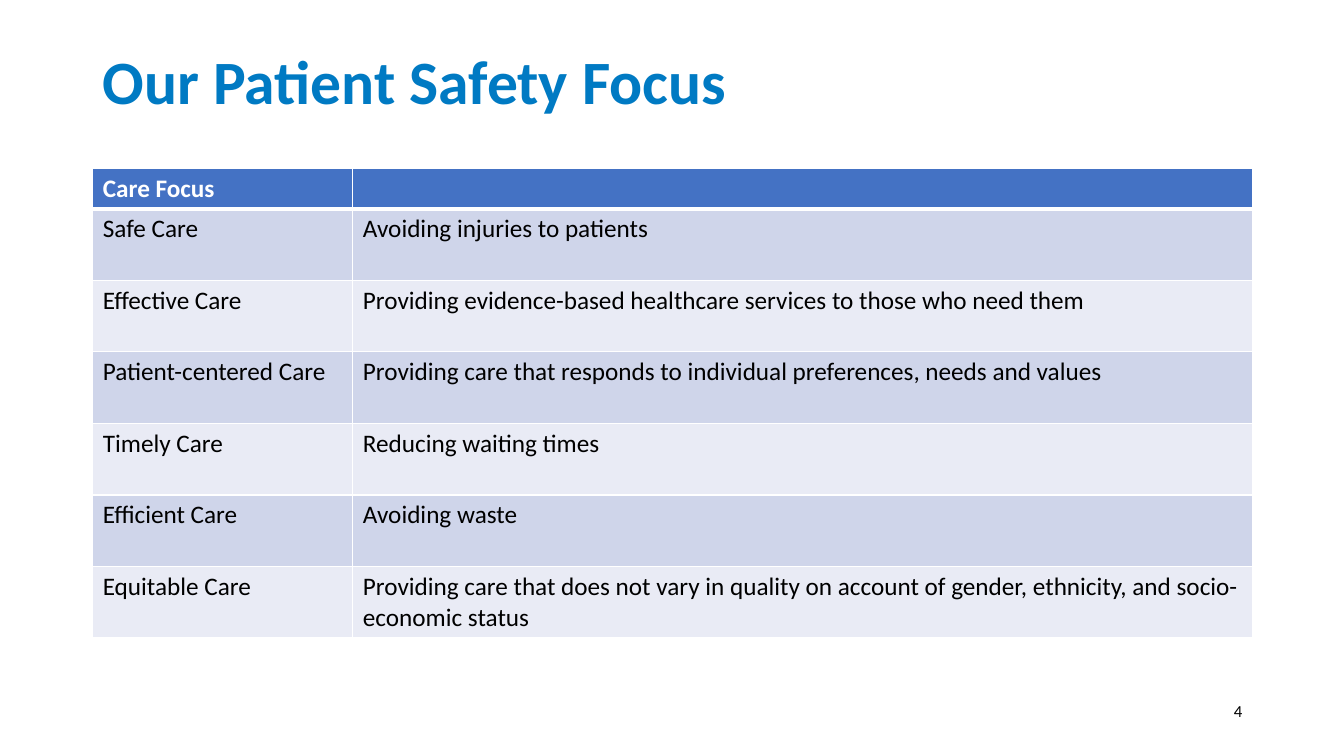
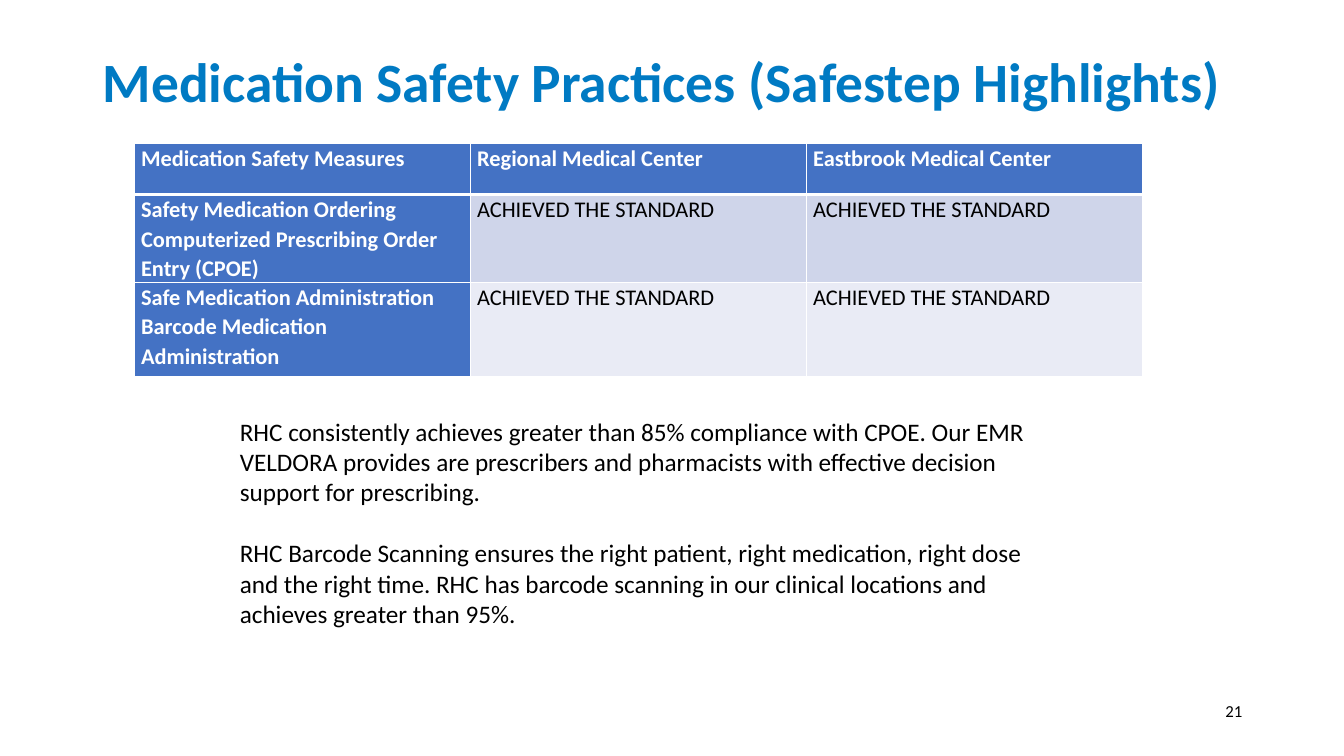
"""Build two patient safety slides with shared titles, tables and page numbers."""
from dataclasses import dataclass

import pptx
import pptx.dml.color
import pptx.enum.text
import pptx.oxml
import pptx.oxml.ns
import pptx.util

Inches = pptx.util.Inches
Pt = pptx.util.Pt
Anchor = pptx.enum.text.MSO_ANCHOR
Align = pptx.enum.text.PP_ALIGN


@dataclass(frozen=True)
class Theme:
    """Colours, font and type sizes of the deck."""
    font: str = "Calibri"
    title: str = "007AC3"
    header: str = "4472C4"
    bands: tuple = ("CFD5EA", "E9EBF5")
    light: str = "FFFFFF"
    dark: str = "000000"
    title_size: float = 44
    body_size: float = 18
    compact_size: float = 16
    number_size: float = 12
    rule: float = 1
    header_rule: float = 3


class Deck:
    """Hold the theme and the current slide, and add elements to it."""

    def __init__(self, theme):
        """Start an empty widescreen presentation."""
        self.theme = theme
        self.presentation = pptx.Presentation()
        self.presentation.slide_width = Inches(13.33)
        self.presentation.slide_height = Inches(7.5)
        self.slide = None

    def add_slide(self, title, number, title_size=None):
        """Add a slide with its title and page number."""
        self.slide = self.presentation.slides.add_slide(self.presentation.slide_layouts[6])
        self.add_text((0.92, 0.26, 11.5, 1.16), [title], title_size or self.theme.title_size,
                      color=self.theme.title, bold=True, anchor=Anchor.MIDDLE, line_spacing=0.9)
        self.add_text((11.67, 6.85, 0.75, 0.4), [str(number)], self.theme.number_size,
                      anchor=Anchor.MIDDLE, align=Align.RIGHT)

    def add_run(self, paragraph, text, size, color, bold=False):
        """Add one styled run to a paragraph."""
        run = paragraph.add_run()
        run.text = text
        run.font.name = self.theme.font
        run.font.size = Pt(size)
        run.font.bold = bold
        run.font.color.rgb = pptx.dml.color.RGBColor.from_string(color)

    def add_text(self, box, texts, size, color=None, bold=False, anchor=Anchor.TOP,
                 align=Align.LEFT, line_spacing=None, gap=0):
        """Add a wrapped text box with one paragraph for each text."""
        shape = self.slide.shapes.add_textbox(*map(Inches, box))
        frame = shape.text_frame
        frame.word_wrap = True
        frame.vertical_anchor = anchor
        for index, text in enumerate(texts):
            paragraph = frame.add_paragraph() if index else frame.paragraphs[0]
            paragraph.alignment = align
            paragraph.line_spacing = line_spacing
            if index:
                paragraph.space_before = Pt(gap)
            self.add_run(paragraph, text, size, color or self.theme.dark, bold)

    def add_borders(self, cell, row):
        """Rule a cell in white, with a heavier line below the header row."""
        theme = self.theme
        widths = {"L": theme.rule, "R": theme.rule,
                  "T": theme.header_rule if row == 1 else theme.rule,
                  "B": theme.header_rule if row == 0 else theme.rule}
        properties = cell._tc.get_or_add_tcPr()
        for side, width in widths.items():
            properties.append(pptx.oxml.parse_xml(
                f'<a:ln{side} {pptx.oxml.ns.nsdecls("a")} w="{Pt(width)}"><a:solidFill>'
                f'<a:srgbClr val="{theme.light}"/></a:solidFill></a:ln{side}>'))

    def add_table(self, left, top, widths, heights, rows, size,
                  header_column=False, margins=None, line_spacing=None):
        """Add a banded table with a header row and an optional header column."""
        theme = self.theme
        table = self.slide.shapes.add_table(
            len(rows), len(widths), Inches(left), Inches(top),
            Inches(sum(widths)), Inches(sum(heights))).table
        table.first_row = table.horz_banding = False
        for column, width in zip(table.columns, widths):
            column.width = Inches(width)
        for row_index, texts in enumerate(rows):
            table.rows[row_index].height = Inches(heights[row_index])
            for column_index, text in enumerate(texts):
                cell = table.cell(row_index, column_index)
                is_header = row_index == 0 or (header_column and column_index == 0)
                self.add_borders(cell, row_index)
                fill = theme.header if is_header else theme.bands[(row_index - 1) % 2]
                cell.fill.solid()
                cell.fill.fore_color.rgb = pptx.dml.color.RGBColor.from_string(fill)
                if margins:
                    cell.margin_left = cell.margin_right = Inches(margins[0])
                    cell.margin_top = cell.margin_bottom = Inches(margins[1])
                paragraph = cell.text_frame.paragraphs[0]
                paragraph.line_spacing = line_spacing
                if text:
                    self.add_run(paragraph, text, size,
                                 theme.light if is_header else theme.dark, is_header)


def main():
    """Build both slides and save the deck."""
    theme = Theme()
    deck = Deck(theme)

    deck.add_slide("Our Patient Safety Focus", 4)
    care_rows = [
        ("Care Focus", ""),
        ("Safe Care", "Avoiding injuries to patients"),
        ("Effective Care", "Providing evidence-based healthcare services to those who need them"),
        ("Patient-centered Care",
         "Providing care that responds to individual preferences, needs and values"),
        ("Timely Care", "Reducing waiting times"),
        ("Efficient Care", "Avoiding waste"),
        ("Equitable Care", "Providing care that does not vary in quality on account of gender, "
                           "ethnicity, and socio-economic status"),
    ]
    deck.add_table(0.92, 1.67, [2.58, 8.92], [0.4] + [0.71] * 6, care_rows, theme.body_size)

    deck.add_slide("Medication Safety Practices (Safestep Highlights)", 21, title_size=39.6)
    achieved = ("ACHIEVED THE STANDARD",) * 2
    medication_rows = [
        ("Medication Safety Measures", "Regional Medical Center", "Eastbrook Medical Center"),
        ("Safety Medication Ordering Computerized Prescribing Order Entry (CPOE)", *achieved),
        ("Safe Medication Administration Barcode Medication Administration", *achieved),
    ]
    deck.add_table(1.33, 1.42, [10 / 3] * 3, [0.51, 0.87, 0.94], medication_rows,
                   theme.compact_size, header_column=True, margins=(0.07, 0), line_spacing=1.07)
    deck.add_text((2.28, 4.08, 8.11, 2.22), [
        "RHC consistently achieves greater than 85% compliance with CPOE. Our EMR VELDORA "
        "provides are prescribers and pharmacists with effective decision support for prescribing.",
        "RHC Barcode Scanning ensures the right patient, right medication, right dose and the "
        "right time. RHC has barcode scanning in our clinical locations and achieves greater "
        "than 95%.",
    ], theme.body_size, gap=22)

    deck.presentation.save("out.pptx")


if __name__ == "__main__":
    main()
